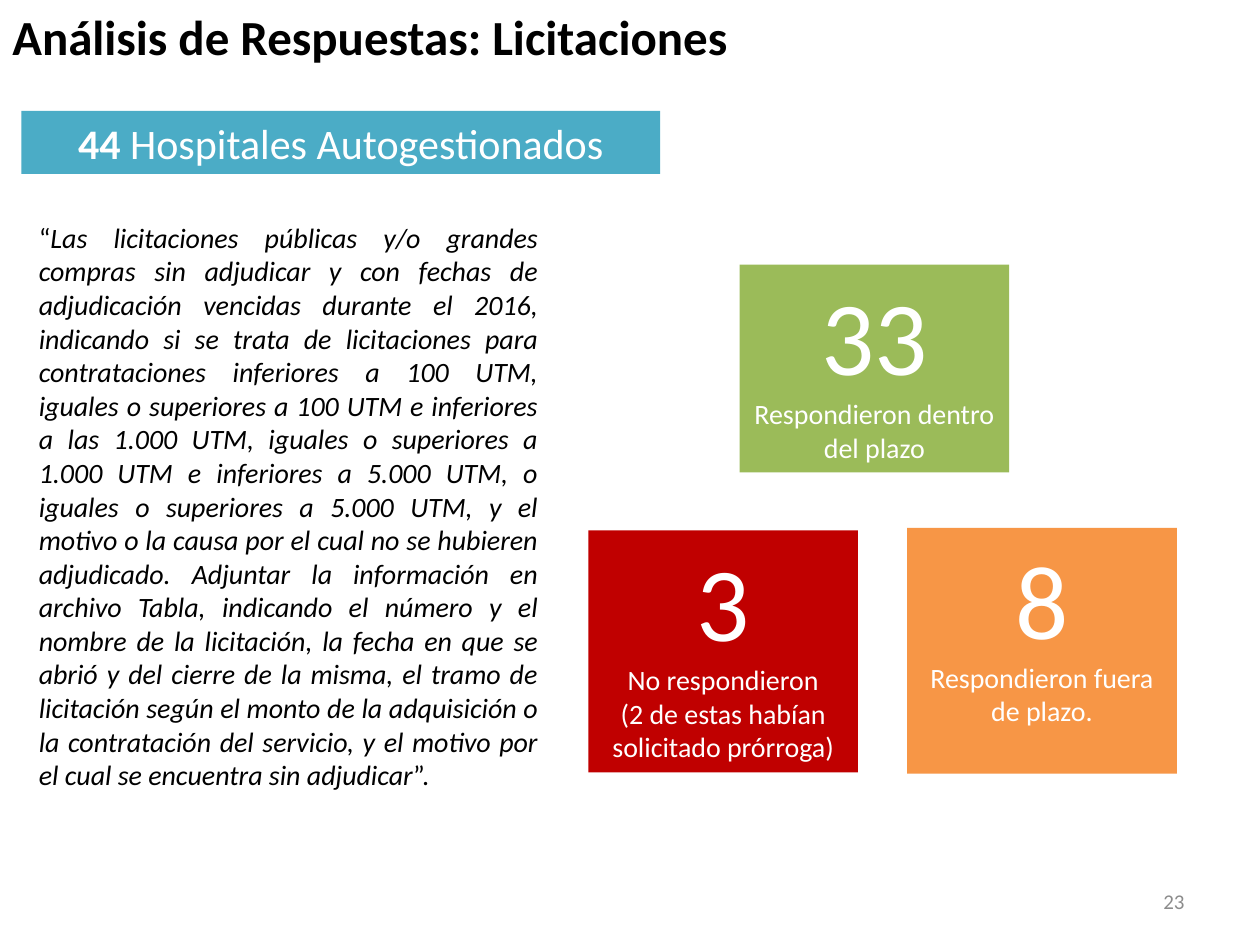
from pptx import Presentation
from pptx.dml.color import RGBColor
from pptx.enum import shapes, text
from pptx.util import Inches, Pt

BLACK = RGBColor(0x00, 0x00, 0x00)
WHITE = RGBColor(0xFF, 0xFF, 0xFF)
GRAY = RGBColor(0x8C, 0x8C, 0x8C)
TEAL = RGBColor(0x4B, 0xAC, 0xC6)
RED = RGBColor(0xC0, 0x00, 0x00)
GREEN = RGBColor(0x9B, 0xBB, 0x59)
ORANGE = RGBColor(0xF7, 0x96, 0x46)

LEFT, CENTER = text.PP_ALIGN.LEFT, text.PP_ALIGN.CENTER
RIGHT, JUSTIFY = text.PP_ALIGN.RIGHT, text.PP_ALIGN.JUSTIFY
TOP, MIDDLE = text.MSO_ANCHOR.TOP, text.MSO_ANCHOR.MIDDLE

TITLE = "Análisis de Respuestas: Licitaciones"
HOSPITALS = [("44", 24, "b"), (" Hospitales Autogestionados", 24, "")]
REQUEST = (
    "Las licitaciones públicas y/o grandes compras sin adjudicar y con fechas de "
    "adjudicación vencidas durante el 2016, indicando si se trata de licitaciones para "
    "contrataciones inferiores a 100 UTM, iguales o superiores a 100 UTM e inferiores a "
    "las 1.000 UTM, iguales o superiores a 1.000 UTM e inferiores a 5.000 UTM, o iguales "
    "o superiores a 5.000 UTM, y el motivo o la causa por el cual no se hubieren "
    "adjudicado. Adjuntar la información en archivo Tabla, indicando el número y el "
    "nombre de la licitación, la fecha en que se abrió y del cierre de la misma, el tramo "
    "de licitación según el monto de la adquisición o la contratación del servicio, y el "
    "motivo por el cual se encuentra sin adjudicar"
)
PAGE = "23"

CARD_WIDTH = 2.14
CARDS = [
    ("3", ["No respondieron", "(2 de estas habían solicitado prórroga)"],
     RED, 4.67, 4.21, 1.92),
    ("33", ["Respondieron dentro del plazo"], GREEN, 5.87, 2.1, 1.65),
    ("8", ["Respondieron fuera de plazo."], ORANGE, 7.2, 4.19, 1.95),
]


def write(shape, paragraphs, color, align, anchor=TOP):
    frame = shape.text_frame
    frame.word_wrap = True
    frame.auto_size = text.MSO_AUTO_SIZE.NONE
    frame.vertical_anchor = anchor
    for index, runs in enumerate(paragraphs):
        paragraph = frame.add_paragraph() if index else frame.paragraphs[0]
        paragraph.alignment = align
        for words, size, style in runs:
            run = paragraph.add_run()
            run.text = words
            run.font.name = "Calibri"
            run.font.size = Pt(size)
            run.font.bold = style == "b"
            run.font.italic = style == "i"
            run.font.color.rgb = color


def add_text(slide, box, paragraphs, color, align, anchor=TOP):
    label = slide.shapes.add_textbox(*map(Inches, box))
    write(label, paragraphs, color, align, anchor)


def add_block(slide, box, fill, paragraphs):
    block = slide.shapes.add_shape(shapes.MSO_SHAPE.RECTANGLE, *map(Inches, box))
    block.shadow.inherit = False
    block.fill.solid()
    block.fill.fore_color.rgb = fill
    block.line.fill.background()
    write(block, paragraphs, WHITE, CENTER)


def main():
    deck = Presentation()
    deck.slide_width, deck.slide_height = Inches(10), Inches(7.5)
    slide = deck.slides.add_slide(deck.slide_layouts[6])

    add_text(slide, (0, 0, 9.88, 0.57), [[(TITLE, 28, "b")]], BLACK, LEFT)
    add_block(slide, (0.17, 0.88, 5.07, 0.5), TEAL, [HOSPITALS])
    for count, captions, fill, left, top, height in CARDS:
        lines = [[(count, 60, "")]] + [[(caption, 16, "")] for caption in captions]
        add_block(slide, (left, top, CARD_WIDTH, height), fill, lines)
    quote = [("“", 16, ""), (REQUEST, 16, "i"), ("”.", 16, "")]
    add_text(slide, (0.21, 1.7, 4.16, 4.68), [quote], BLACK, JUSTIFY)
    add_text(slide, (7.17, 6.95, 2.33, 0.4), [[(PAGE, 12, "")]], GRAY, RIGHT, MIDDLE)

    deck.save("out.pptx")


if __name__ == "__main__":
    main()
